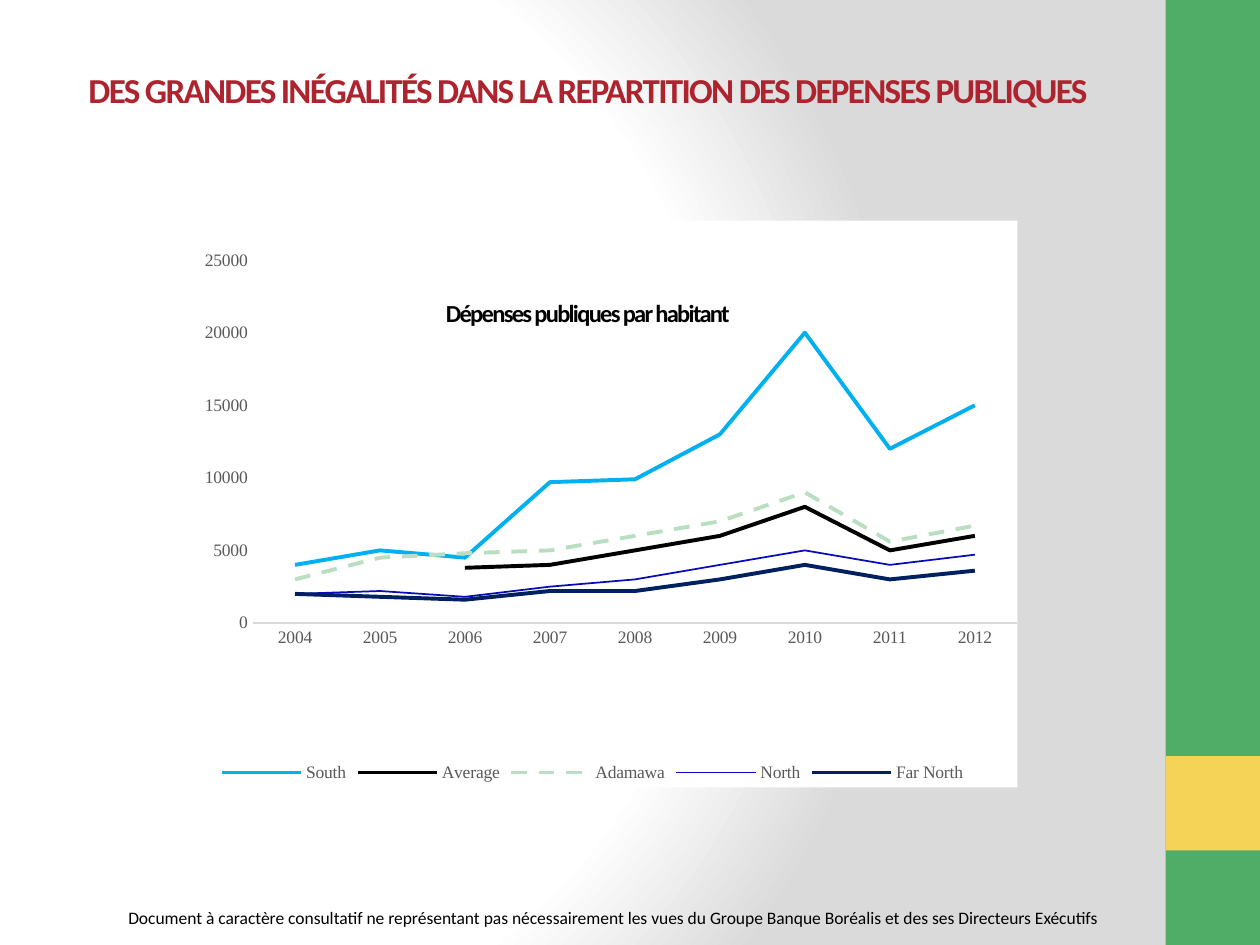
from pptx import Presentation
from pptx.chart.data import CategoryChartData
from pptx.dml.color import RGBColor
from pptx.enum.chart import XL_CHART_TYPE as Kind, XL_LEGEND_POSITION as Spot, XL_TICK_MARK as Tick
from pptx.enum.dml import MSO_LINE as Dash
from pptx.enum.shapes import MSO_SHAPE as Shape
from pptx.enum.text import MSO_ANCHOR as Anchor, PP_ALIGN as Align
from pptx.oxml import parse_xml
from pptx.oxml.ns import nsdecls
from pptx.util import Inches, Pt

TITLE = "DES GRANDES INÉGALITÉS DANS LA REPARTITION DES DEPENSES PUBLIQUES"
HEAD = "Dépenses publiques par habitant"
NOTE = ("Document à caractère consultatif ne représentant pas nécessairement les vues "
        "du Groupe Banque Boréalis et des ses Directeurs Exécutifs")
YEARS = [str(year) for year in range(2004, 2013)]
# name, values, colour, line width, dash
SERIES = [
    ("South", (4000, 5000, 4500, 9700, 9900, 13000, 20000, 12000, 15000), "00B0F0", 2.25, None),
    ("Average", (None, None, 3800, 4000, 5000, 6000, 8000, 5000, 6000), "000000", 2.25, None),
    ("Adamawa", (3000, 4500, 4800, 5000, 6000, 7000, 9000, 5600, 6700), "B9DEC2", 2.25, Dash.DASH),
    ("North", (2000, 2200, 1800, 2500, 3000, 4000, 5000, 4000, 4700), "080BBA", 1, None),
    ("Far North", (2000, 1800, 1600, 2200, 2200, 3000, 4000, 3000, 3600), "002060", 2.25, None),
]
THEME = dict(
    sans="Calibri", serif="Times New Roman", title=20, head=14, small=10,
    red="AD242F", black="000000", white="FFFFFF", grey="595959", rule="D9D9D9",
    shade="DADADA", green="50AD68", gold="F4D356",
)
WIDE, HIGH = 10, 7.5
UNIT = HIGH / 10  # side of the gold square, width of the green band
PLOT = dict(x=0.1, y=0.07, w=0.9, h=0.64)


def color(name):
    return RGBColor.from_string(THEME.get(name, name))


def style(font, size, tint, face, bold=False):
    font.size, font.name, font.bold = Pt(size), face, bold
    font.color.rgb = color(tint)


def write(slide, text, box, size, tint="black", bold=False, align=Align.LEFT, track=0):
    """Add a text box; track is the letter spacing in points."""
    frame = slide.shapes.add_textbox(*map(Inches, box)).text_frame
    frame.word_wrap = True
    frame.vertical_anchor = Anchor.MIDDLE
    par = frame.paragraphs[0]
    par.alignment = align
    run = par.add_run()
    run.text = text
    style(run.font, size, tint, THEME["sans"], bold)
    if track:
        run.font._element.set("spc", str(track * 100))


def block(slide, top, height, tint):
    box = map(Inches, (WIDE - UNIT, top, UNIT, height))
    shape = slide.shapes.add_shape(Shape.RECTANGLE, *box)
    shape.shadow.inherit = False
    shape.fill.solid()
    shape.fill.fore_color.rgb = color(tint)
    shape.line.fill.background()


def shade(slide):
    """Give the slide a round gradient that turns grey on the right."""
    stops = "".join(
        f'<a:gs pos="{pos * 1000}"><a:srgbClr val="{THEME[tint]}"/></a:gs>'
        for pos, tint in ((0, "white"), (75, "white"), (100, "shade")))
    slide.element.cSld.insert(0, parse_xml(
        f'<p:bg {nsdecls("p", "a")}><p:bgPr><a:gradFill rotWithShape="1">'
        f'<a:gsLst>{stops}</a:gsLst><a:path path="circle">'
        '<a:fillToRect l="20000" t="50000" r="100000" b="50000"/></a:path>'
        '</a:gradFill><a:effectLst/></p:bgPr></p:bg>'))


def frame_plot(chart):
    """Fill the chart area with white and fix the inner plot area."""
    root = chart._chartSpace.chart
    root.addnext(parse_xml(
        f'<c:spPr {nsdecls("c", "a")}><a:solidFill><a:srgbClr val="{THEME["white"]}"/>'
        '</a:solidFill><a:ln><a:noFill/></a:ln></c:spPr>'))
    area = root.plotArea
    for old in area.findall(area.tag.replace("plotArea", "layout")):
        area.remove(old)
    modes = "".join(f'<c:{key}Mode val="edge"/>' for key in "xy")
    sides = "".join(f'<c:{key} val="{val}"/>' for key, val in PLOT.items())
    area.insert(0, parse_xml(
        f'<c:layout {nsdecls("c")}><c:manualLayout><c:layoutTarget val="inner"/>'
        f'{modes}{sides}</c:manualLayout></c:layout>'))


def draw_chart(slide, box):
    data = CategoryChartData()
    data.categories = YEARS
    for name, vals, *_ in SERIES:
        data.add_series(name, vals)
    chart = slide.shapes.add_chart(Kind.LINE, *map(Inches, box), data).chart
    small, serif = THEME["small"], THEME["serif"]
    style(chart.font, small, "black", serif)
    chart.has_title = False
    chart.has_legend = True
    chart.legend.position = Spot.BOTTOM
    chart.legend.include_in_layout = False
    style(chart.legend.font, small, "grey", serif)
    for axis in (chart.category_axis, chart.value_axis):
        axis.major_tick_mark = axis.minor_tick_mark = Tick.NONE
        axis.has_major_gridlines = False
        style(axis.tick_labels.font, small, "grey", serif)
    line = chart.category_axis.format.line
    line.color.rgb, line.width = color("rule"), Pt(0.75)
    scale = chart.value_axis
    scale.minimum_scale, scale.maximum_scale, scale.major_unit = 0, 25000, 5000
    scale.format.line.fill.background()
    for item, (_, _, tint, width, dash) in zip(chart.plots[0].series, SERIES):
        item.smooth = False
        line = item.format.line
        line.color.rgb, line.width = color(tint), Pt(width)
        if dash:
            line.dash_style = dash
    frame_plot(chart)


def main():
    deck = Presentation()
    deck.slide_width, deck.slide_height = Inches(WIDE), Inches(HIGH)
    slide = deck.slides.add_slide(deck.slide_layouts[6])
    shade(slide)
    block(slide, 0, HIGH, "green")
    block(slide, 8 * UNIT, UNIT, "gold")
    write(slide, NOTE, (0.92, 7.15, 8.83, 0.27), THEME["small"])
    draw_chart(slide, (1.33, 1.75, 9 * UNIT, 6 * UNIT))
    main_text = dict(bold=True, align=Align.CENTER, track=-1)
    write(slide, TITLE, (0.5, 0.46, 8.33, 0.5), THEME["title"], "red", **main_text)
    write(slide, HEAD, (0.5, 2.28, 8.33, 0.4), THEME["head"], **main_text)
    deck.save("out.pptx")


if __name__ == "__main__":
    main()
